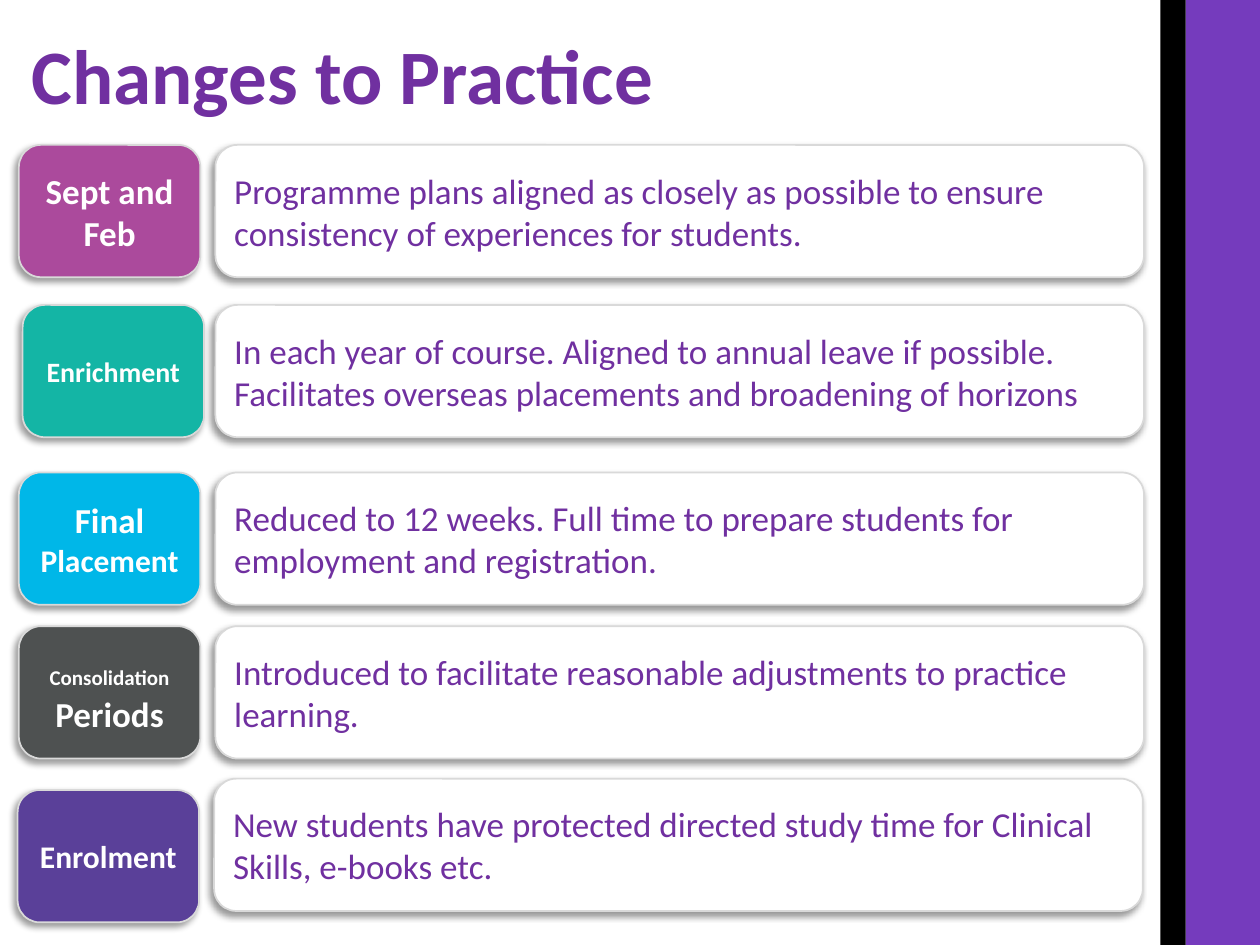
"""Build the Changes to Practice slide: five labelled rows beside a purple band."""
from lxml import etree
from pptx import Presentation
from pptx.dml.color import RGBColor
from pptx.enum import shapes, text
from pptx.oxml.ns import qn
from pptx.util import Inches, Pt

TITLE = "Changes to Practice"
ROWS = [
    dict(label=[("Sept and Feb", 20)], fill="AB4A9C", tag=(0.15, 1.15), card=(1.71, 1.15),
         body="Programme plans aligned as closely as possible to ensure "
              "consistency of experiences for students."),
    dict(label=[("Enrichment", 16)], fill="14B5A5", tag=(0.18, 2.42), card=(1.71, 2.42),
         body="In each year of course. Aligned to annual leave if possible. "
              "Facilitates overseas placements and broadening of horizons"),
    dict(label=[("Final ", 20), ("Placement", 18)], fill="00B7E8", tag=(0.15, 3.75),
         card=(1.71, 3.75),
         body="Reduced to 12 weeks. Full time to prepare students for "
              "employment and registration."),
    dict(label=[("Consolidation", 12), (" Periods", 20)], fill="4E5151", tag=(0.15, 4.97),
         card=(1.71, 4.97),
         body="Introduced to facilitate reasonable adjustments to practice learning."),
    dict(label=[("Enrolment", 18)], fill="5A4099", tag=(0.14, 6.27), card=(1.7, 6.18),
         body="New students have protected directed study time for Clinical "
              "Skills, e-books etc."),
]
BANDS = [(9.41, 0.59, "753BBD"), (9.21, 0.2, "000000")]
THEME = dict(font="Calibri", ink="7030A0", white="FFFFFF", edge="D9D9D9",
             title=44, body=20)
HIGH, TAG, CARD = 1.05, 1.44, 7.37


def style(font, size, color, bold=False):
    """Set face, size, colour and weight on a font."""
    font.name, font.bold = THEME["font"], bold
    font.color.rgb = RGBColor.from_string(color)
    if size:
        font.size = Pt(size)


def block(slide, kind, box, fill):
    """Add a filled shape without line or shadow."""
    shape = slide.shapes.add_shape(kind, *map(Inches, box))
    shape.fill.solid()
    shape.fill.fore_color.rgb = RGBColor.from_string(fill)
    shape.line.fill.background()
    shape.shadow.inherit = False
    return shape


def panel(slide, spot, wide, fill, runs, color, align, bold):
    """Add a rounded panel with edge, soft shadow and one paragraph."""
    shape = block(slide, shapes.MSO_SHAPE.ROUNDED_RECTANGLE, (*spot, wide, HIGH), fill)
    shape.line.color.rgb = RGBColor.from_string(THEME["edge"])
    shape.line.width = Pt(1)
    effects = shape._element.spPr.find(qn("a:effectLst"))
    shade = etree.SubElement(effects, qn("a:outerShdw"), blurRad=str(Pt(4)),
                             dist=str(Pt(3)), dir="8100000", algn="tr", rotWithShape="0")
    tone = etree.SubElement(shade, qn("a:srgbClr"), val="000000")
    etree.SubElement(tone, qn("a:alpha"), val="40000")
    frame = shape.text_frame
    frame.word_wrap = True
    frame.vertical_anchor = text.MSO_ANCHOR.MIDDLE
    para = frame.paragraphs[0]
    para.alignment = align
    sizes = {size for _, size in runs}
    style(para.font, sizes.pop() if len(sizes) == 1 else None, color, bold)
    for words, size in runs:
        run = para.add_run()
        run.text = words
        if sizes:
            run.font.size = Pt(size)


def head(slide):
    """Place and format the title."""
    title = slide.shapes.title
    title.left, title.top, title.width, title.height = map(Inches, (0.15, 0.17, 8.67, 1.42))
    frame = title.text_frame
    frame.text = TITLE
    frame.word_wrap = True
    frame.vertical_anchor = text.MSO_ANCHOR.TOP
    para = frame.paragraphs[0]
    para.alignment = text.PP_ALIGN.LEFT
    style(para.font, THEME["title"], THEME["ink"], True)


def main():
    """Build and save the slide."""
    deck = Presentation()
    deck.slide_width, deck.slide_height = Inches(10), Inches(7.5)
    slide = deck.slides.add_slide(deck.slide_layouts[5])
    head(slide)
    for left, wide, fill in BANDS:
        block(slide, shapes.MSO_SHAPE.RECTANGLE, (left, 0, wide, 7.5), fill)
    for row in ROWS:
        panel(slide, row["tag"], TAG, row["fill"], row["label"],
              THEME["white"], text.PP_ALIGN.CENTER, True)
        panel(slide, row["card"], CARD, THEME["white"], [(row["body"], THEME["body"])],
              THEME["ink"], text.PP_ALIGN.LEFT, False)
    deck.save("out.pptx")


if __name__ == "__main__":
    main()
